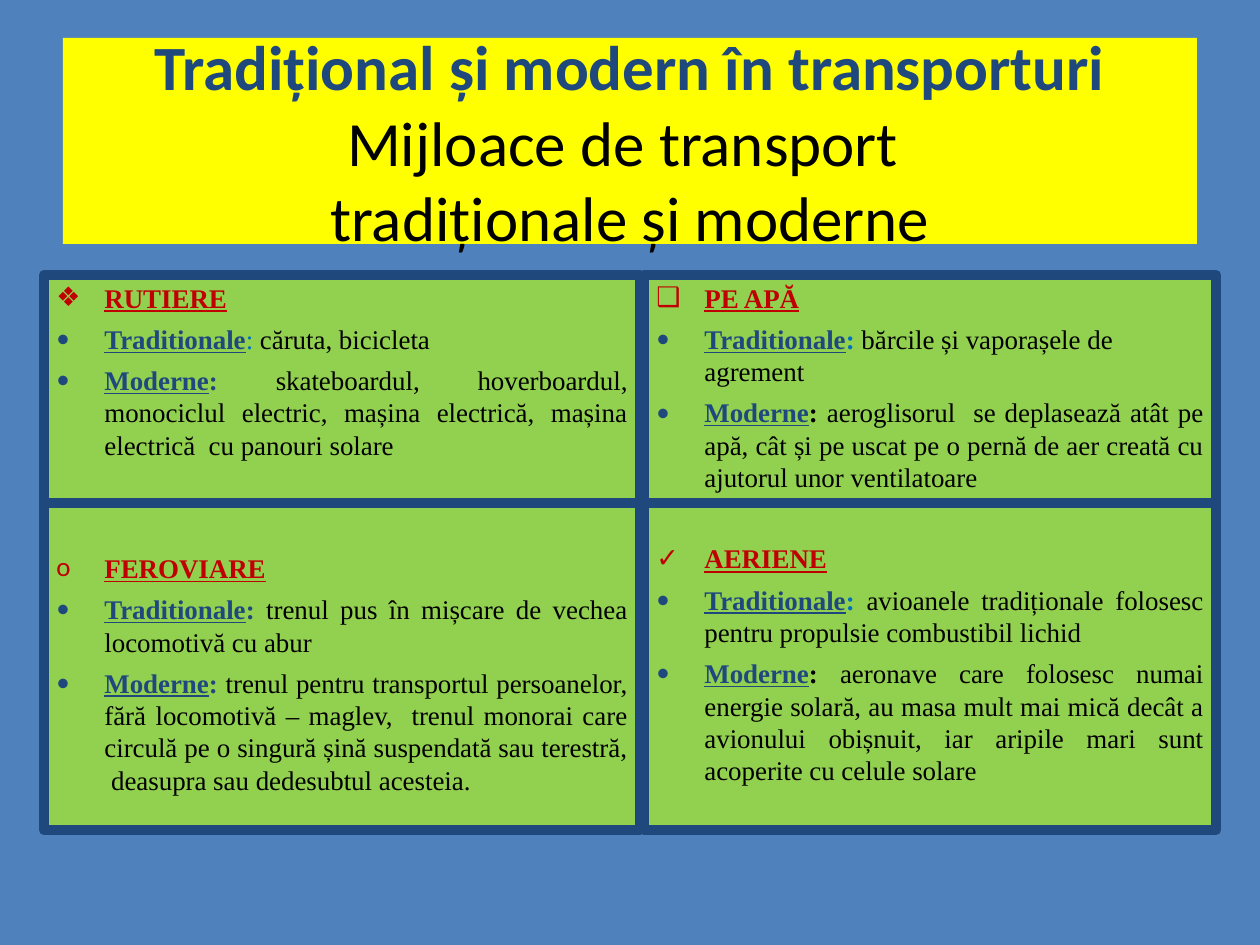
from dataclasses import dataclass

from lxml.etree import SubElement
from pptx import Presentation
from pptx.dml.color import RGBColor
from pptx.enum.shapes import MSO_CONNECTOR, MSO_SHAPE
from pptx.enum.text import MSO_ANCHOR, PP_ALIGN
from pptx.oxml.ns import qn
from pptx.util import Emu, Pt

PX = 914400 / 126  # EMU per px

BLUE = RGBColor(0x4F, 0x81, 0xBD)
NAVY = RGBColor(0x1F, 0x49, 0x7D)
SKY = RGBColor(0x00, 0x70, 0xC0)
RED = RGBColor(0xC0, 0x00, 0x00)
GREEN = RGBColor(0x92, 0xD0, 0x50)
YELLOW = RGBColor(0xFF, 0xFF, 0x00)
BLACK = RGBColor(0x00, 0x00, 0x00)

HEAD, BODY = "Calibri", "Times New Roman"
INDENT = 48
BORDER = Pt(6)


@dataclass
class Entry:
    label: str
    text: str
    colon: RGBColor = NAVY
    colon_bold: bool = True
    align: PP_ALIGN = PP_ALIGN.JUSTIFY


@dataclass
class Group:
    bullet: str
    title: str
    entries: list[Entry]
    gap: int = 0  # points above the heading


@dataclass
class Panel:
    x: int
    y: int
    w: int
    h: int
    groups: list[Group]


OLD, NEW = "Traditionale", "Moderne"

PANELS = [
    Panel(44, 275, 596, 555, [
        Group("❖", "RUTIERE", [
            Entry(OLD, "căruta, bicicleta", SKY, colon_bold=False),
            Entry(NEW, "skateboardul, hoverboardul, monociclul electric, mașina "
                       "electrică, mașina electrică  cu panouri solare"),
        ]),
        Group("o", "FEROVIARE", [
            Entry(OLD, "trenul pus în mișcare de vechea locomotivă cu abur"),
            Entry(NEW, "trenul pentru transportul persoanelor, fără locomotivă – "
                       "maglev,  trenul monorai care circulă pe o singură șină "
                       "suspendată sau terestră,  deasupra sau dedesubtul acesteia."),
        ], gap=52),
    ]),
    Panel(644, 275, 572, 555, [
        Group("❑", "PE APĂ", [
            Entry(OLD, "bărcile și vaporașele de agrement", SKY, align=PP_ALIGN.LEFT),
            Entry(NEW, "aeroglisorul  se deplasează atât pe apă, cât și pe uscat pe o "
                       "pernă de aer creată cu ajutorul unor ventilatoare", BLACK),
        ]),
        Group("✓", "AERIENE", [
            Entry(OLD, "avioanele tradiționale folosesc pentru propulsie "
                       "combustibil lichid", SKY),
            Entry(NEW, "aeronave care folosesc numai energie solară, au masa mult mai "
                       "mică decât a avionului obișnuit, iar aripile mari sunt "
                       "acoperite cu celule solare", BLACK),
        ], gap=28),
    ]),
]


def px(n: int) -> Emu:
    return Emu(round(n * PX))


def add_run(p, text: str, color: RGBColor, **formats) -> None:
    r = p.add_run()
    r.text = text
    r.font.color.rgb = color
    for name, value in {"name": BODY, "size": Pt(15.4), **formats}.items():
        setattr(r.font, name, value)


def add_box(s, x: int, y: int, w: int, h: int, fill: RGBColor):
    sp = s.shapes.add_shape(MSO_SHAPE.RECTANGLE, px(x), px(y), px(w), px(h))
    sp.shadow.inherit = False
    sp.fill.solid()
    sp.fill.fore_color.rgb = fill
    sp.line.fill.background()
    sp.text_frame.word_wrap = True
    return sp


def set_border(sp) -> None:
    sp.line.color.rgb = NAVY
    sp.line.width = BORDER
    SubElement(sp.line._get_or_add_ln(), qn("a:round"))


def add_item(tf, bullet: str, before: int, align: PP_ALIGN):
    p = tf.paragraphs[0] if not tf.paragraphs[0].runs else tf.add_paragraph()
    formats = {"alignment": align, "space_before": Pt(before), "line_spacing": Pt(18.5)}
    for name, value in formats.items():
        setattr(p, name, value)
    pPr = p._p.get_or_add_pPr()
    pPr.set("marL", str(px(INDENT)))
    pPr.set("indent", str(-px(INDENT)))
    SubElement(pPr, qn("a:buFont"), typeface=HEAD)
    SubElement(pPr, qn("a:buChar"), char=bullet)
    return p


def add_panel(s, panel: Panel) -> None:
    sp = add_box(s, panel.x, panel.y, panel.w, panel.h, GREEN)
    set_border(sp)
    tf = sp.text_frame
    tf.vertical_anchor = MSO_ANCHOR.TOP
    for group in panel.groups:
        p = add_item(tf, group.bullet, group.gap, PP_ALIGN.LEFT)
        add_run(p, group.title, RED, bold=True, underline=True)
        for e in group.entries:
            p = add_item(tf, "•", 5, e.align)
            add_run(p, e.label, NAVY, bold=True, underline=True)
            add_run(p, ": ", e.colon, bold=e.colon_bold)
            add_run(p, e.text, BLACK)


def add_title(s) -> None:
    tf = add_box(s, 63, 38, 1134, 206, YELLOW).text_frame
    tf.vertical_anchor = MSO_ANCHOR.MIDDLE
    p = tf.paragraphs[0]
    p.alignment = PP_ALIGN.CENTER
    font = {"name": HEAD, "size": Pt(36)}
    add_run(p, "Tradițional și modern în transporturi", NAVY, bold=True, **font)
    for line in ("Mijloace de transport ", "tradiționale și moderne"):
        p.add_line_break()
        add_run(p, line, BLACK, **font)


def add_divider(s, x1: int, x2: int, y: int) -> None:
    line = s.shapes.add_connector(MSO_CONNECTOR.STRAIGHT, px(x1), px(y), px(x2), px(y))
    line.line.color.rgb = NAVY
    line.line.width = BORDER
    SubElement(line._element.spPr, qn("a:effectLst"))


def main() -> None:
    prs = Presentation()
    prs.slide_width, prs.slide_height = px(1260), px(945)
    s = prs.slides.add_slide(prs.slide_layouts[6])
    s.background.fill.solid()
    s.background.fill.fore_color.rgb = BLUE

    # Title band
    add_title(s)

    # Two columns, split into four cells by the divider
    for panel in PANELS:
        add_panel(s, panel)
    add_divider(s, 44, 1216, 503)

    prs.save("out.pptx")


if __name__ == "__main__":
    main()
